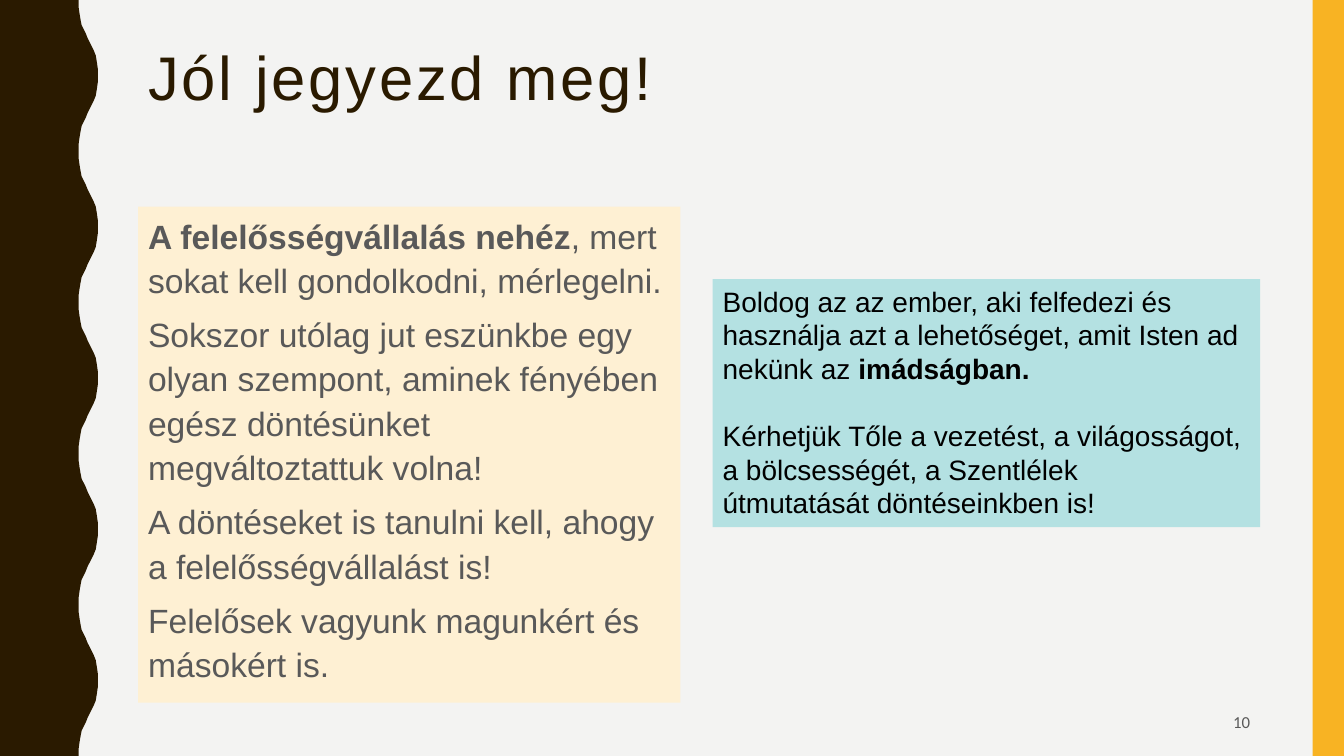
from pptx import Presentation
from pptx.dml.color import RGBColor as RGB
from pptx.enum.shapes import MSO_SHAPE as Shape
from pptx.enum.text import MSO_ANCHOR as Anchor, MSO_AUTO_SIZE as Fit, PP_ALIGN as Align
from pptx.util import Inches, Pt

HEX = {"paper": "F3F3F2", "brown": "2A1A00", "gold": "F8B323", "cream": "FEF0D3",
       "aqua": "B4E1E2", "grey": "595959", "black": "000000"}

# Half a wave as (x, y) in 1/750 of the slide height; the other half mirrors it
HALF = [(78, 0), (78, 7), (79, 14), (80, 20), (81, 25), (83, 29), (85, 33), (87, 38),
        (89, 42), (91, 46), (93, 50), (95, 55), (96, 61), (97, 68), (97, 75)]
WAVES, PERIOD = 5, 150

LEFT = [
    [("A felelősségvállalás nehéz", True),
     (", mert sokat kell gondolkodni, mérlegelni.", False)],
    [("Sokszor utólag jut eszünkbe egy olyan szempont, aminek fényében "
      "egész döntésünket megváltoztattuk volna!", False)],
    [("A döntéseket is tanulni kell, ahogy a felelősségvállalást is!", False)],
    [("Felelősek vagyunk magunkért és másokért is.", False)],
]
RIGHT = [
    [("Boldog az az ember, aki felfedezi és használja azt a lehetőséget, "
      "amit Isten ad nekünk az ", False), ("imádságban.", True)],
    [("Kérhetjük Tőle a vezetést, a világosságot, a bölcsességét, a Szentlélek", False)],
    [("útmutatását döntéseinkben is!", False)],
]


class Deck:
    """Holds the style and the current slide; places are percent of the slide."""

    def __init__(self):
        self.prs = Presentation()
        self.prs.slide_width, self.prs.slide_height = Inches(13.33), Inches(7.5)
        self.slide = self.prs.slides.add_slide(self.prs.slide_layouts[5])
        self.paint(self.slide.background.fill, "paper")

    def paint(self, fill, color):
        fill.solid()
        fill.fore_color.rgb = RGB.from_string(HEX[color])

    def place(self, left, top, width, height):
        wide, high = self.prs.slide_width, self.prs.slide_height
        return [round(part * side / 100) for part, side in
                zip((left, top, width, height), (wide, high, wide, high))]

    def plain(self, shape, color):
        shape.shadow.inherit = False
        shape.line.fill.background()
        self.paint(shape.fill, color)

    def wave(self, color):
        edge = []
        for i in range(WAVES):
            top = i * PERIOD
            edge += [(x, top + y) for x, y in HALF]
            edge += [(x, top + PERIOD - y) for x, y in HALF[-2::-1]]
        end = WAVES * PERIOD
        form = self.slide.shapes.build_freeform(0, 0, self.prs.slide_height / end)
        form.add_line_segments(edge + [(0, end)])
        self.plain(form.convert_to_shape(), color)

    def rect(self, at, color):
        box = self.slide.shapes.add_shape(Shape.RECTANGLE, *self.place(*at))
        self.plain(box, color)
        return box

    def title(self, at, text, **look):
        box = self.slide.shapes.title
        for name, val in zip(("left", "top", "width", "height"), self.place(*at)):
            setattr(box, name, val)
        self.set_text(box, [[(text, False)]], **look)
        box.text_frame.paragraphs[0].runs[0].font._element.set("spc", "200")

    def label(self, at, text, **look):
        box = self.slide.shapes.add_textbox(*self.place(*at))
        self.set_text(box, [[(text, False)]], **look)

    def set_text(self, box, paras, size, color, face="Arial", frame=None, para=None):
        """Fills box with paragraphs, each a list of (text, bold) runs."""
        body = box.text_frame
        fmt = {"word_wrap": True, "auto_size": Fit.NONE, "vertical_anchor": Anchor.TOP}
        for name, val in (fmt | (frame or {})).items():
            setattr(body, name, val)
        for i, parts in enumerate(paras):
            line = body.add_paragraph() if i else body.paragraphs[0]
            for name, val in ({"alignment": Align.LEFT} | (para or {})).items():
                setattr(line, name, val)
            for text, bold in parts:
                run = line.add_run()
                run.text = text
                look = {"size": Pt(size), "name": face, "bold": bold}
                for name, val in look.items():
                    setattr(run.font, name, val)
                run.font.color.rgb = RGB.from_string(HEX[color])


def main():
    deck = Deck()
    deck.wave("brown")
    deck.rect((97.67, 0, 2.33, 100), "gold")
    deck.title((10.28, 5.6, 83.5, 8.67), "Jól jegyezd meg!", size=44, color="brown",
               para={"line_spacing": 0.9})
    duty = deck.rect((10.28, 27.33, 40.35, 65.6), "cream")
    deck.set_text(duty, LEFT, 24, "grey", para={"line_spacing": 1.1, "space_before": Pt(7)})
    deck.label((70.65, 92.93, 23.1, 5.07), "10", size=12, color="grey", face="Calibri",
               frame={"vertical_anchor": Anchor.MIDDLE}, para={"alignment": Align.RIGHT})
    prayer = deck.rect((53.03, 36.93, 40.73, 32.8), "aqua")
    deck.set_text(prayer, RIGHT, 20, "black", frame={"auto_size": Fit.SHAPE_TO_FIT_TEXT})
    prayer.text_frame.paragraphs[1].space_before = Pt(24)
    deck.prs.save("out.pptx")


if __name__ == "__main__":
    main()
